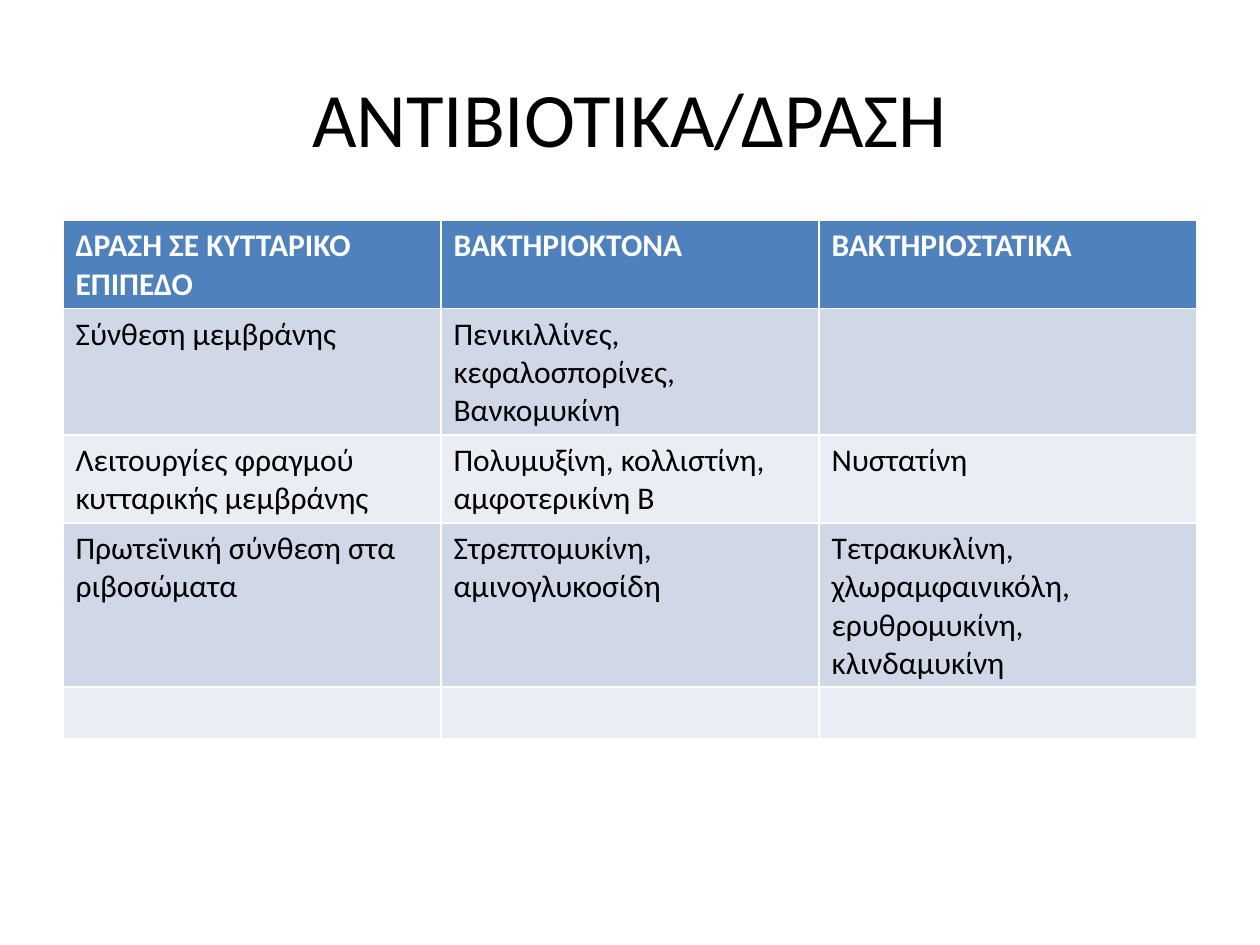
from pptx import Presentation
from pptx.dml.color import RGBColor
from pptx.enum.text import MSO_ANCHOR, PP_ALIGN
from pptx.util import Inches, Pt

MIDDLE = MSO_ANCHOR.MIDDLE
CENTER = PP_ALIGN.CENTER

FONT = "Calibri"
BLACK, WHITE = "000000", "FFFFFF"
HEADER_FILL = "4F81BD"
BAND_FILLS = ("D0D8E8", "E9EDF4")

TITLE = "ΑΝΤΙΒΙΟΤΙΚΑ/ΔΡΑΣΗ"
ROWS = [
    ("ΔΡΑΣΗ ΣΕ ΚΥΤΤΑΡΙΚΟ ΕΠΙΠΕΔΟ", "ΒΑΚΤΗΡΙΟΚΤΟΝΑ", "ΒΑΚΤΗΡΙΟΣΤΑΤΙΚΑ"),
    ("Σύνθεση μεμβράνης", "Πενικιλλίνες, κεφαλοσπορίνες, Βανκομυκίνη", ""),
    ("Λειτουργίες φραγμού κυτταρικής μεμβράνης",
     "Πολυμυξίνη, κολλιστίνη, αμφοτερικίνη Β", "Νυστατίνη"),
    ("Πρωτεϊνική σύνθεση στα ριβοσώματα", "Στρεπτομυκίνη, αμινογλυκοσίδη",
     "Τετρακυκλίνη, χλωραμφαινικόλη, ερυθρομυκίνη, κλινδαμυκίνη"),
    ("", "", ""),
]
LEFT, WIDTH = 0.5, 9
TABLE_TOP, ROW_HEIGHT = 1.75, 0.41


def rgb(color):
    return RGBColor.from_string(color)


def write(tf, text, size, color, bold=False):
    p = tf.paragraphs[0]
    p.text = text
    p.font.name = FONT
    p.font.size = Pt(size)
    p.font.bold = bold
    p.font.color.rgb = rgb(color)
    return p


def add_title(s):
    sp = s.shapes.add_textbox(Inches(LEFT), Inches(0.3), Inches(WIDTH), Inches(1.25))
    tf = sp.text_frame
    tf.word_wrap = True
    tf.vertical_anchor = MIDDLE
    write(tf, TITLE, 44, BLACK).alignment = CENTER


def add_antibiotics_table(s):
    """The default table style supplies the white cell borders."""
    table = s.shapes.add_table(
        len(ROWS), len(ROWS[0]), Inches(LEFT), Inches(TABLE_TOP),
        Inches(WIDTH), Inches(ROW_HEIGHT * len(ROWS))).table
    for i, row in enumerate(ROWS):
        header = i == 0
        fill = HEADER_FILL if header else BAND_FILLS[(i - 1) % 2]
        for j, text in enumerate(row):
            cell = table.cell(i, j)
            cell.fill.solid()
            cell.fill.fore_color.rgb = rgb(fill)
            write(cell.text_frame, text, 18, WHITE if header else BLACK, header)


def main():
    prs = Presentation()
    prs.slide_width, prs.slide_height = Inches(10), Inches(7.5)
    s = prs.slides.add_slide(prs.slide_layouts[6])
    add_title(s)
    add_antibiotics_table(s)
    prs.save("out.pptx")


if __name__ == "__main__":
    main()
